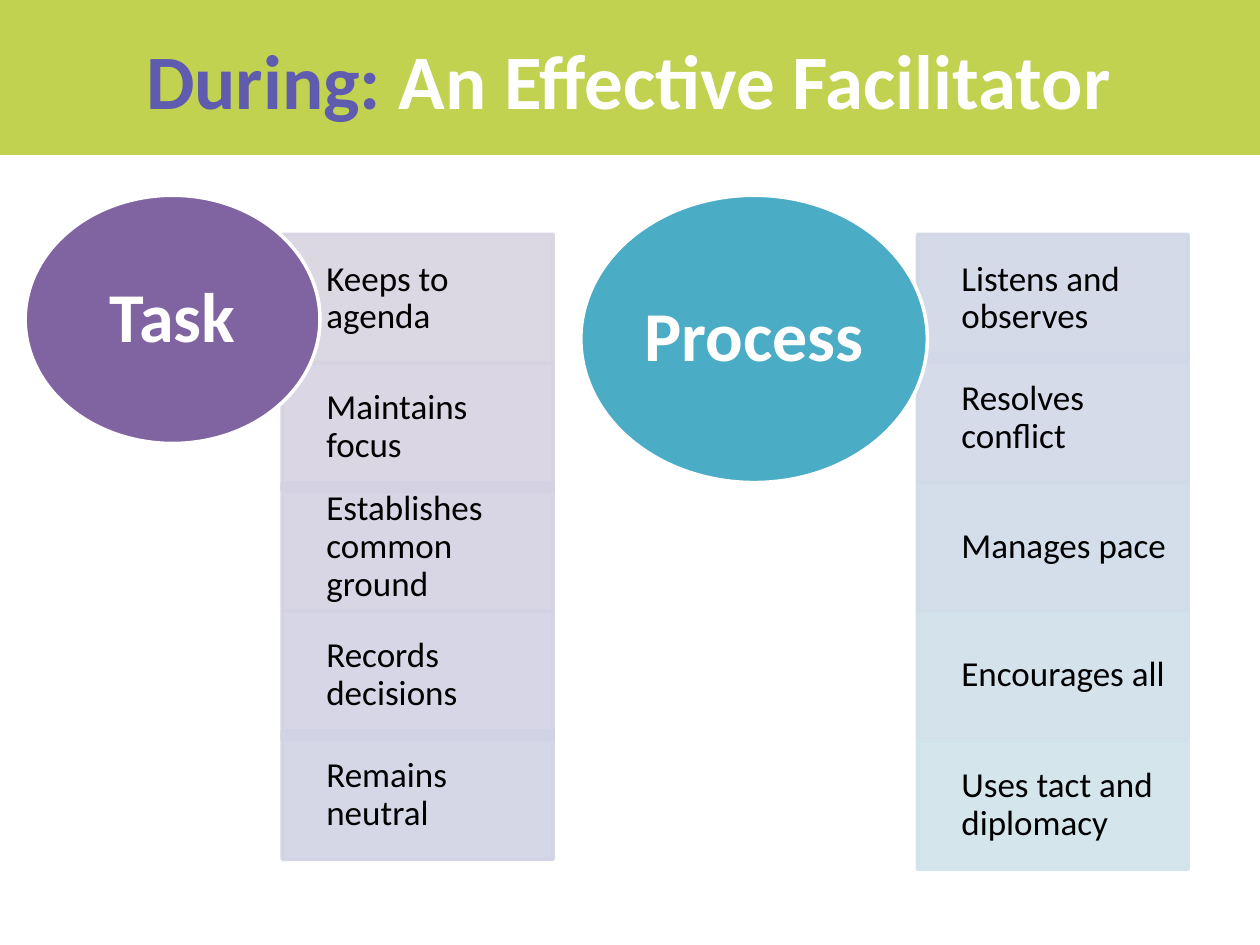
"""Builds a slide on the task and process roles of an effective facilitator."""
from lxml import etree
from pptx import Presentation
from pptx.dml.color import RGBColor
from pptx.enum.shapes import MSO_SHAPE
from pptx.enum.text import MSO_ANCHOR, PP_ALIGN
from pptx.oxml.ns import qn
from pptx.util import Inches, Pt

RECT, OVAL = MSO_SHAPE.RECTANGLE, MSO_SHAPE.OVAL
MIDDLE = MSO_ANCHOR.MIDDLE
LEFT, CENTER = PP_ALIGN.LEFT, PP_ALIGN.CENTER

LIME = RGBColor(0xC1, 0xD1, 0x50)
INDIGO = RGBColor(0x5F, 0x5B, 0xAE)
PURPLE = RGBColor(0x80, 0x64, 0xA2)
TEAL = RGBColor(0x4B, 0xAC, 0xC6)
WHITE = RGBColor(0xFF, 0xFF, 0xFF)
BLACK = RGBColor(0, 0, 0)
LILAC_1 = RGBColor(0xD8, 0xD3, 0xE0)
LILAC_2 = RGBColor(0xD6, 0xD2, 0xE1)
LILAC_3 = RGBColor(0xD4, 0xD2, 0xE2)
LILAC_4 = RGBColor(0xD2, 0xD2, 0xE4)
LILAC_5 = RGBColor(0xD1, 0xD3, 0xE5)
MIST_1 = RGBColor(0xD1, 0xD6, 0xE6)
MIST_2 = RGBColor(0xD1, 0xD8, 0xE7)
MIST_3 = RGBColor(0xD0, 0xDB, 0xE8)
MIST_4 = RGBColor(0xD0, 0xDF, 0xE9)
MIST_5 = RGBColor(0xD0, 0xE3, 0xEA)

FONT = "Calibri"
CELL_W, CELL_H = 2.15, 1.02
OVAL_TOP = 1.55

TASK = [
    (1.86, "Keeps to agenda", LILAC_1),
    (2.88, "Maintains focus", LILAC_2),
    (3.83, "Establishes common ground", LILAC_3),
    (4.85, "Records decisions", LILAC_4),
    (5.8, "Remains neutral", LILAC_5),
]
PROCESS = [
    (1.86, "Listens and observes", MIST_1),
    (2.81, "Resolves conflict", MIST_2),
    (3.83, "Manages pace", MIST_3),
    (4.85, "Encourages all", MIST_4),
    (5.88, "Uses tact and diplomacy", MIST_5),
]


def add_text(shape, runs, size, bold, align, insets, spacing=0.9):
    """Write one paragraph of (text, colour) runs into a shape."""
    frame = shape.text_frame
    frame.word_wrap = True
    frame.vertical_anchor = MIDDLE
    (frame.margin_left, frame.margin_top,
     frame.margin_right, frame.margin_bottom) = map(Inches, insets)
    para = frame.paragraphs[0]
    para.alignment = align
    para.line_spacing = spacing
    for text, color in runs:
        run = para.add_run()
        run.text = text
        run.font.name = FONT
        run.font.size = Pt(size)
        run.font.bold = bold
        run.font.color.rgb = color


def add_block(slide, kind, box, fill, line=None):
    """Add a filled preset shape, outlined if a line colour is given."""
    shape = slide.shapes.add_shape(kind, *map(Inches, box))
    shape.shadow.inherit = False
    shape.fill.solid()
    shape.fill.fore_color.rgb = fill
    if line is None:
        shape.line.fill.background()
    else:
        shape.line.color.rgb = line
        shape.line.width = Pt(2)
    return shape


def soften(shape, percent):
    """Set the opacity of a shape's fill and line."""
    for color in shape.element.spPr.iter(qn("a:srgbClr")):
        etree.SubElement(color, qn("a:alpha"), val=str(percent * 1000))


def add_title(slide):
    """Add the title band and its two-colour heading."""
    add_block(slide, RECT, (0, -0.02, 10, 1.25), LIME)
    box = slide.shapes.add_textbox(*map(Inches, (0.49, 0, 9, 1.25)))
    runs = [("During: ", INDIGO), ("An Effective Facilitator", WHITE)]
    add_text(box, runs, 44, True, CENTER, (0.1, 0.05, 0.1, 0.05), 1.0)


def add_stack(slide, left, cells):
    """Add a column of tinted cells."""
    for top, text, tint in cells:
        cell = add_block(slide, RECT, (left, top, CELL_W, CELL_H), tint, tint)
        soften(cell, 90)
        add_text(cell, [(text, BLACK)], 20, False, LEFT,
                 (0.35, 0.16, 0.16, 0.16))


def add_oval(slide, left, width, height, fill, text):
    """Add the labelled oval that heads a column."""
    oval = add_block(slide, OVAL, (left, OVAL_TOP, width, height), fill, WHITE)
    add_text(oval, [(text, WHITE)], 40, True, CENTER, (0, 0, 0, 0))


def main():
    """Build and save the slide."""
    deck = Presentation()
    deck.slide_width, deck.slide_height = Inches(10), Inches(7.5)
    slide = deck.slides.add_slide(deck.slide_layouts[6])
    add_title(slide)
    add_stack(slide, 2.24, TASK)
    add_oval(slide, 0.2, 2.34, 1.97, PURPLE, "Task")
    add_stack(slide, 7.28, PROCESS)
    add_oval(slide, 4.61, 2.75, 2.28, TEAL, "Process")
    deck.save("out.pptx")


if __name__ == "__main__":
    main()
